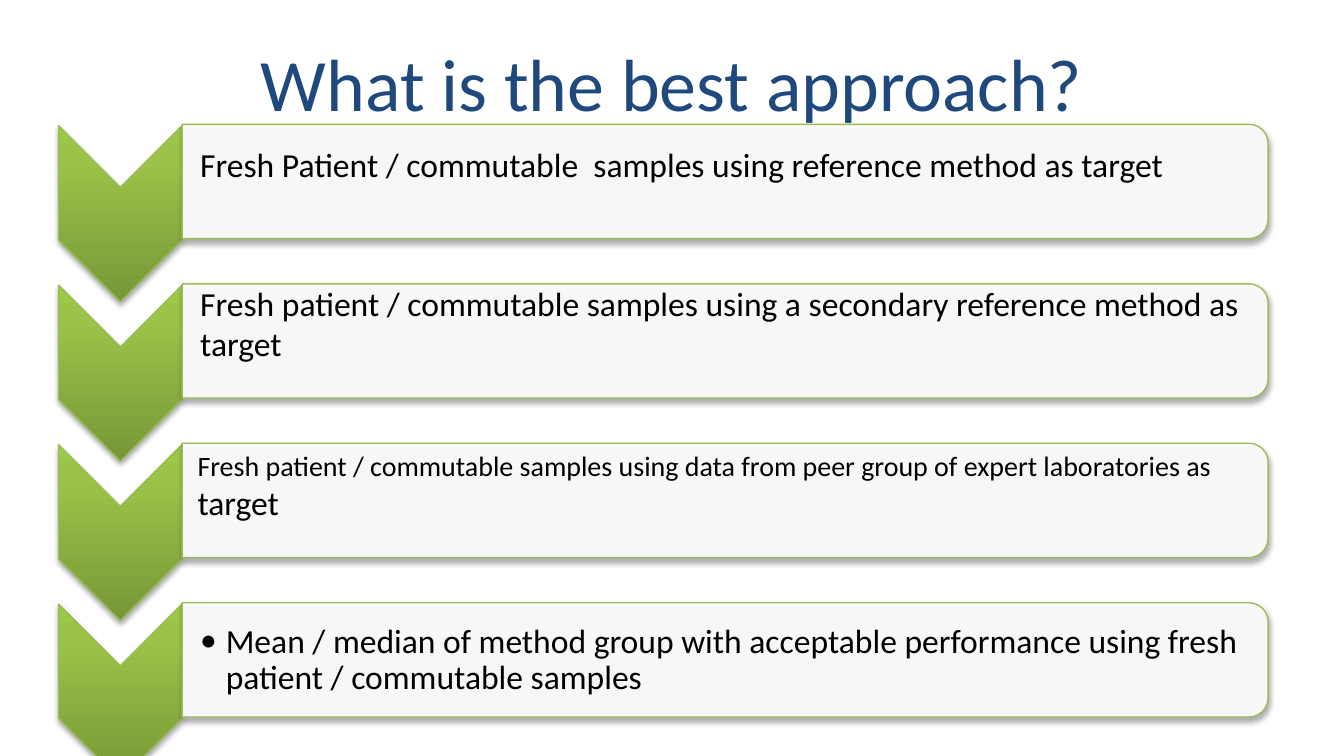
from pptx import Presentation
from pptx.dml.color import RGBColor
from pptx.enum.shapes import MSO_SHAPE
from pptx.enum.text import MSO_ANCHOR, PP_ALIGN
from pptx.oxml import parse_xml
from pptx.oxml.ns import nsdecls, qn
from pptx.util import Inches, Pt

COLORS = {
    "title": "1F497D",
    "text": "000000",
    "panel": "FFFFFF",
    "line": "9BBB59",
    "shadow": "000000",
    "dark": "779737",
    "mid": "9BC348",
    "light": "9DC746",
}


class SlideBuilder:
    font = "Calibri"

    def __init__(self, slide):
        self.slide = slide

    def color(self, name):
        return RGBColor.from_string(COLORS[name])

    def text(self, box, runs, color="text", insets=(0.1, 0.05, 0.1, 0.05),
             align=PP_ALIGN.LEFT, bullet=False):
        """Add one middle-anchored paragraph; runs are (words, size) pairs."""
        text_box = self.slide.shapes.add_textbox(*map(Inches, box))
        frame = text_box.text_frame
        frame.word_wrap = True
        frame.vertical_anchor = MSO_ANCHOR.MIDDLE
        (frame.margin_left, frame.margin_top,
         frame.margin_right, frame.margin_bottom) = map(Inches, insets)
        paragraph = frame.paragraphs[0]
        paragraph.alignment = align
        for words, size in runs:
            run = paragraph.add_run()
            run.text = words
            run.font.name = self.font
            run.font.size = Pt(size)
            run.font.color.rgb = self.color(color)
        if bullet:
            paragraph.line_spacing = 0.9
            properties = paragraph._p.get_or_add_pPr()
            properties.set("marL", str(Inches(0.19)))
            properties.set("indent", str(-Inches(0.19)))
            properties.append(parse_xml(
                f'<a:buFont {nsdecls("a")} typeface="{self.font}"/>'))
            properties.append(parse_xml(f'<a:buChar {nsdecls("a")} char="•"/>'))

    def turned_shape(self, kind, box):
        """Add an outlined, shadowed shape turned a quarter clockwise."""
        shape = self.slide.shapes.add_shape(kind, *map(Inches, box))
        shape.rotation = 90
        shape.fill.solid()
        shape.fill.fore_color.rgb = self.color("panel")
        shape.line.color.rgb = self.color("line")
        shape.line.width = Pt(0.75)
        shape.shadow.inherit = False
        effects = shape._element.spPr.find(qn("a:effectLst"))
        effects.append(parse_xml(
            f'<a:outerShdw {nsdecls("a")} blurRad="{Pt(3.1)}" dist="{Pt(1.8)}" '
            f'dir="5400000" rotWithShape="0"><a:srgbClr val="{COLORS["shadow"]}">'
            f'<a:alpha val="35000"/></a:srgbClr></a:outerShdw>'))
        return shape, shape._element.spPr.find(qn("a:solidFill"))

    def chevron(self, box):
        shape, solid = self.turned_shape(MSO_SHAPE.CHEVRON, box)
        stops = "".join(
            f'<a:gs pos="{position}000"><a:srgbClr val="{COLORS[name]}"/></a:gs>'
            for position, name in ((0, "dark"), (80, "mid"), (100, "light")))
        shape._element.spPr.replace(solid, parse_xml(
            f'<a:gradFill {nsdecls("a")} rotWithShape="0"><a:gsLst>{stops}</a:gsLst>'
            f'<a:lin ang="16200000" scaled="0"/></a:gradFill>'))

    def panel(self, box):
        _, solid = self.turned_shape(MSO_SHAPE.ROUND_2_SAME_RECTANGLE, box)
        solid[0].append(parse_xml(f'<a:alpha {nsdecls("a")} val="90000"/>'))


# Each row: runs, left inset, bottom inset, bullet
ROWS = [
    ([("Fresh Patient / commutable  samples using reference method as target", 18)],
     0.14, 0.28, False),
    ([("Fresh patient / commutable samples using a secondary reference method as target", 18)],
     0.14, 0.28, False),
    ([("Fresh patient / commutable samples using data from peer group of expert "
       "laboratories as ", 15), ("target", 18)],
     0.12, 0.24, False),
    ([("Mean / median of method group with acceptable performance using fresh "
       "patient / commutable samples", 18)],
     0.14, 0.01, True),
]
ROW_PITCH = 3.56 / (len(ROWS) - 1)


def main():
    presentation = Presentation()
    presentation.slide_width = Inches(10)
    presentation.slide_height = Inches(10) * 9 // 16
    builder = SlideBuilder(presentation.slides.add_slide(presentation.slide_layouts[6]))

    # Title
    builder.text((0.5, 0.23, 9, 0.76), [("What is the best approach?", 39.6)],
                 color="title", align=PP_ALIGN.CENTER)

    # Chevron list
    for index, (runs, left, bottom, bullet) in enumerate(ROWS):
        offset = index * ROW_PITCH
        builder.chevron((0.24, 1.13 + offset, 1.31, 0.92))
        builder.panel((4.97, -2.69 + offset, 0.85, 8.08))
        builder.text((1.35, 0.97 + offset, 8.04, 0.77), runs,
                     insets=(left, 0.01, 0.01, bottom), bullet=bullet)

    presentation.save("out.pptx")


if __name__ == "__main__":
    main()
